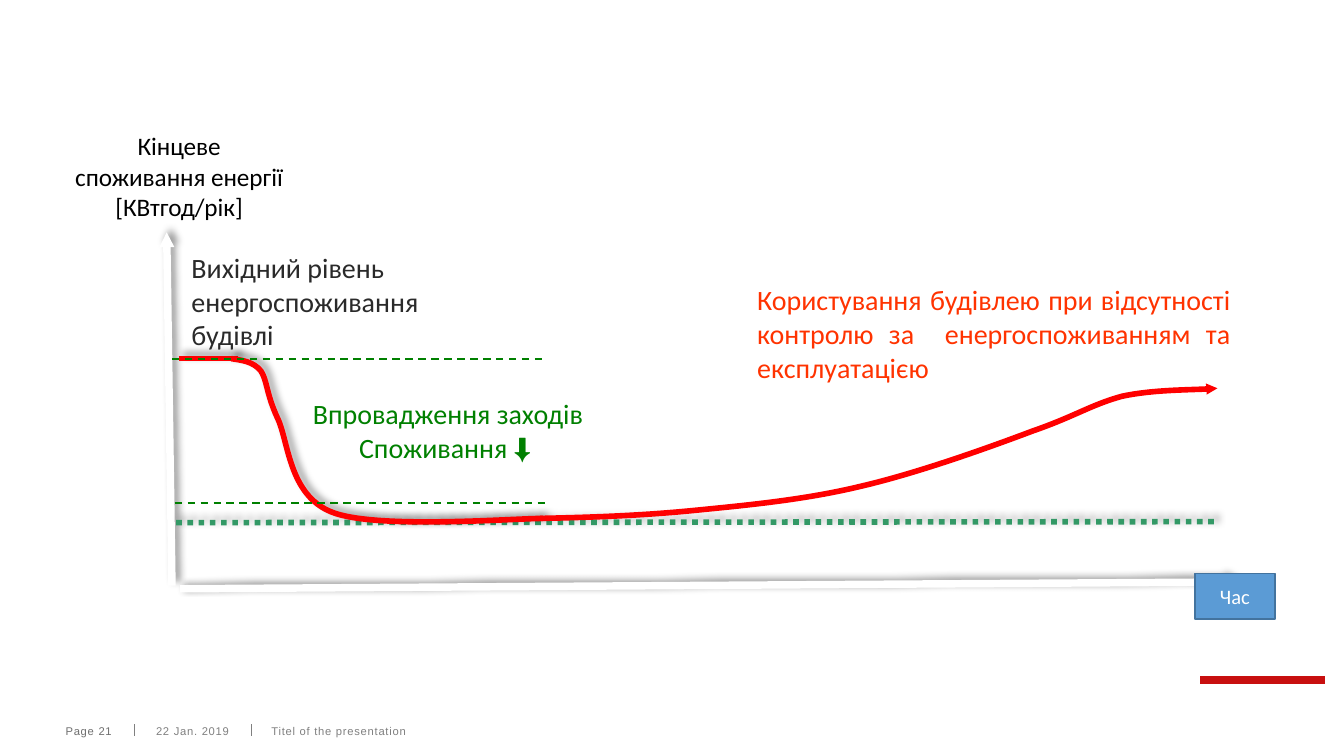
from lxml import etree
from pptx import Presentation
from pptx.dml.color import RGBColor
from pptx.enum import dml, shapes, text
from pptx.oxml.ns import qn
from pptx.util import Cm, Pt

BLACK = RGBColor(0x00, 0x00, 0x00)
WHITE = RGBColor(0xFF, 0xFF, 0xFF)
CHARCOAL = RGBColor(0x2A, 0x2A, 0x2A)
GRAY = RGBColor(0x80, 0x80, 0x80)
DARK_GRAY = RGBColor(0x6F, 0x6F, 0x6F)
RED = RGBColor(0xFF, 0x00, 0x00)
ORANGE = RGBColor(0xFF, 0x33, 0x00)
ACCENT_RED = RGBColor(0xC8, 0x0F, 0x0F)
GREEN = RGBColor(0x00, 0x80, 0x00)
SEA_GREEN = RGBColor(0x33, 0x99, 0x66)
BLUE = RGBColor(0x5B, 0x9B, 0xD5)
BLUE_EDGE = RGBColor(0x43, 0x73, 0x9E)

DASH = dml.MSO_LINE.DASH
DOTS = dml.MSO_LINE.ROUND_DOT
LEFT, CENTER, JUSTIFY = (text.PP_ALIGN.LEFT, text.PP_ALIGN.CENTER,
                         text.PP_ALIGN.JUSTIFY)

# A start point, then two control points and an end point for each cubic
# segment, in cm from the chart box
SAVINGS_CURVE = [
    (1.37, 2.78),
    (1.57, 2.81), (1.78, 2.83), (1.93, 3.01),
    (2.05, 3.19), (2.03, 3.42), (2.23, 3.87),
    (2.46, 4.31), (2.44, 5.35), (3.27, 5.68),
    (4.09, 6.01), (6.7, 5.8), (7.26, 5.8),
]
REBOUND_CURVE = [
    (7.21, 5.8),
    (8.15, 5.78), (9.09, 5.75), (10.11, 5.65),
    (11.12, 5.55), (12.21, 5.45), (13.28, 5.19),
    (14.35, 4.94), (15.69, 4.46), (16.51, 4.15),
    (17.32, 3.87), (17.62, 3.65), (18.21, 3.49),
    (18.77, 3.37), (19.73, 3.37), (20.01, 3.34),
]


def style_line(shape, color, width, dash=None, arrow=False, shadow=False):
    shape.line.color.rgb = color
    shape.line.width = Pt(width)
    if dash:
        shape.line.dash_style = dash
    properties = shape._element.spPr
    if arrow:
        etree.SubElement(properties.find(qn("a:ln")), qn("a:tailEnd"),
                         type="triangle", w="sm", len="sm")
    effects = etree.SubElement(properties, qn("a:effectLst"))
    if shadow:
        outer = etree.SubElement(
            effects, qn("a:outerShdw"), blurRad=str(Pt(4)), dist=str(Pt(3)),
            dir=str(315 * 60000), algn="bl", rotWithShape="0")
        black = etree.SubElement(outer, qn("a:srgbClr"), val="000000")
        etree.SubElement(black, qn("a:alpha"), val="40000")


def add_line(slide, start, end, color, width, **style):
    line = slide.shapes.add_connector(
        shapes.MSO_CONNECTOR.STRAIGHT, *map(Cm, start + end))
    style_line(line, color, width, **style)


def add_curve(slide, points, **style):
    """Draw a freeform and turn each three of its lines into one cubic."""
    first, *rest = [(Cm(x), Cm(y)) for x, y in points]
    builder = slide.shapes.build_freeform(*first)
    builder.add_line_segments(rest, close=False)
    curve = builder.convert_to_shape()
    lines = list(curve._element.iter(qn("a:lnTo")))
    outline = lines[0].getparent()
    for index in range(0, len(lines), 3):
        cubic = etree.SubElement(outline, qn("a:cubicBezTo"))
        for line in lines[index:index + 3]:
            cubic.append(line[0])
            outline.remove(line)
    curve.fill.background()
    style_line(curve, RED, 3, **style)


def write(frame, lines, size, color, align, font="Calibri"):
    frame.word_wrap = True
    frame.text = "\n".join(lines)
    for paragraph in frame.paragraphs:
        paragraph.alignment = align
        paragraph.font.name = font
        paragraph.font.size = Pt(size)
        paragraph.font.color.rgb = color


def add_label(slide, box, lines, size, color, align, margins=(0.25, 0.13),
              font="Calibri"):
    frame = slide.shapes.add_textbox(*map(Cm, box)).text_frame
    frame.margin_left = frame.margin_right = Cm(margins[0])
    frame.margin_top = frame.margin_bottom = Cm(margins[1])
    write(frame, lines, size, color, align, font)
    return frame


def add_box(slide, box, color):
    rectangle = slide.shapes.add_shape(
        shapes.MSO_SHAPE.RECTANGLE, *map(Cm, box))
    rectangle.shadow.inherit = False
    rectangle.fill.solid()
    rectangle.fill.fore_color.rgb = color
    rectangle.line.fill.background()
    return rectangle


def add_footer(slide, left, top, height):
    add_box(slide, (left + 21.44, top - 0.91, 2.36, 0.15), ACCENT_RED)
    for offset in (3.51, 1.3):
        x = left + offset
        add_line(slide, (x, top), (x, top + 0.23), GRAY, 0.75)
    for offset, width, wording, color in (
            (1.71, 1.47, "22 Jan. 2019", GRAY),
            (3.89, 16.05, "Titel of the presentation", GRAY),
            (0, 1.24, "Page 21", DARK_GRAY)):
        frame = add_label(slide, (left + offset, top, width, height),
                          [wording], 6, color, LEFT, (0, 0), "Arial")
        frame.vertical_anchor = text.MSO_ANCHOR.MIDDLE
        run = frame.paragraphs[0].runs[0]
        run._r.get_or_add_rPr().set("spc", "40")


def add_energy_chart(slide, left, top):
    def at(x, y):
        return left + x, top + y

    add_label(slide, (*at(-1.76, -1.61), 4.29, 1.88),
              ["Кінцеве споживання енергії [КВтгод/рік]"],
              13.5, BLACK, CENTER, (0.15, 0.08))
    add_line(slide, at(0.25, 7.07), at(0.15, 0.39), WHITE, 4,
             arrow=True, shadow=True)
    add_line(slide, at(0.4, 7.13), at(20.34, 7), WHITE, 4,
             arrow=True, shadow=True)
    add_line(slide, at(0.33, 5.88), at(20.01, 5.86), SEA_GREEN, 3,
             dash=DOTS, shadow=True)
    add_line(slide, at(0.38, 2.78), at(1.5, 2.78), RED, 3, shadow=True)
    add_label(slide, (*at(0.37, 0.61), 5.11, 2.18),
              ["Вихідний рівень ", "енергоспоживання", "будівлі"],
              15, CHARCOAL, JUSTIFY)
    add_curve(slide, [at(*point) for point in SAVINGS_CURVE], shadow=True)
    add_label(slide, (*at(2.46, 3.37), 6.02, 1.55),
              ["Впровадження заходів", "Споживання ⬇ "], 15, GREEN, CENTER)
    add_curve(slide, [at(*point) for point in REBOUND_CURVE], arrow=True)
    add_label(slide, (*at(11.06, 1.22), 9.45, 2.18),
              ["Користування будівлею при відсутності контролю за  "
               "енергоспоживанням та експлуатацією"], 15, ORANGE, JUSTIFY)

    time_axis = add_box(slide, (*at(19.58, 6.84), 1.52, 0.87), BLUE)
    time_axis.line.color.rgb = BLUE_EDGE
    time_axis.line.width = Pt(1)
    time_axis.text_frame.vertical_anchor = text.MSO_ANCHOR.MIDDLE
    write(time_axis.text_frame, ["Час"], 11, WHITE, CENTER)

    for x, y in ((0.25, 2.78), (0.3, 5.5)):
        add_line(slide, at(x, y), at(x + 7.01, y), GREEN, 1, dash=DASH)


def main():
    presentation = Presentation()
    presentation.slide_width = Cm(25.4)
    presentation.slide_height = Cm(14.29)
    slide = presentation.slides.add_slide(presentation.slide_layouts[6])
    add_footer(slide, left=1.24, top=13.69, height=0.25)
    add_energy_chart(slide, left=3, top=4)
    presentation.save("out.pptx")


if __name__ == "__main__":
    main()
